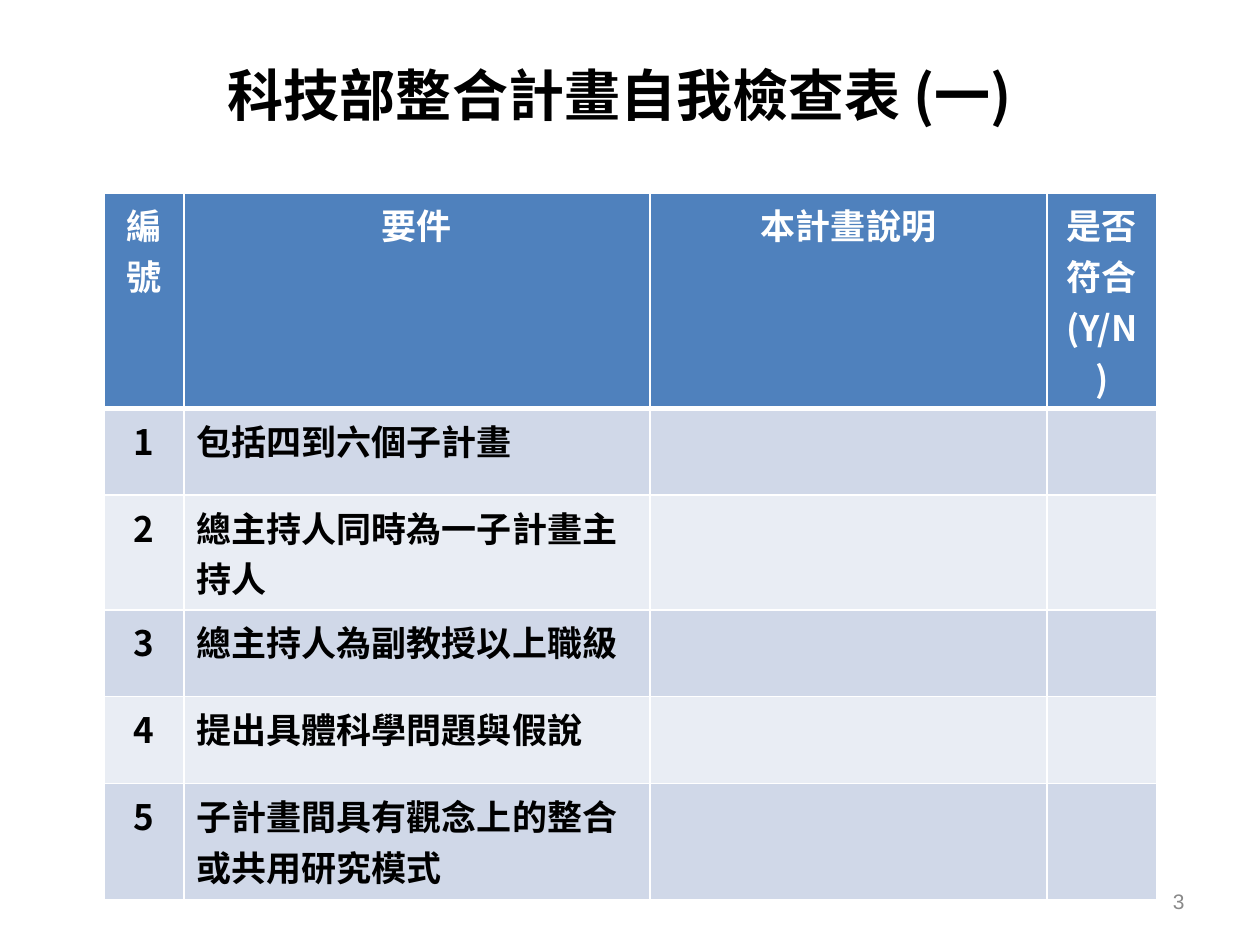
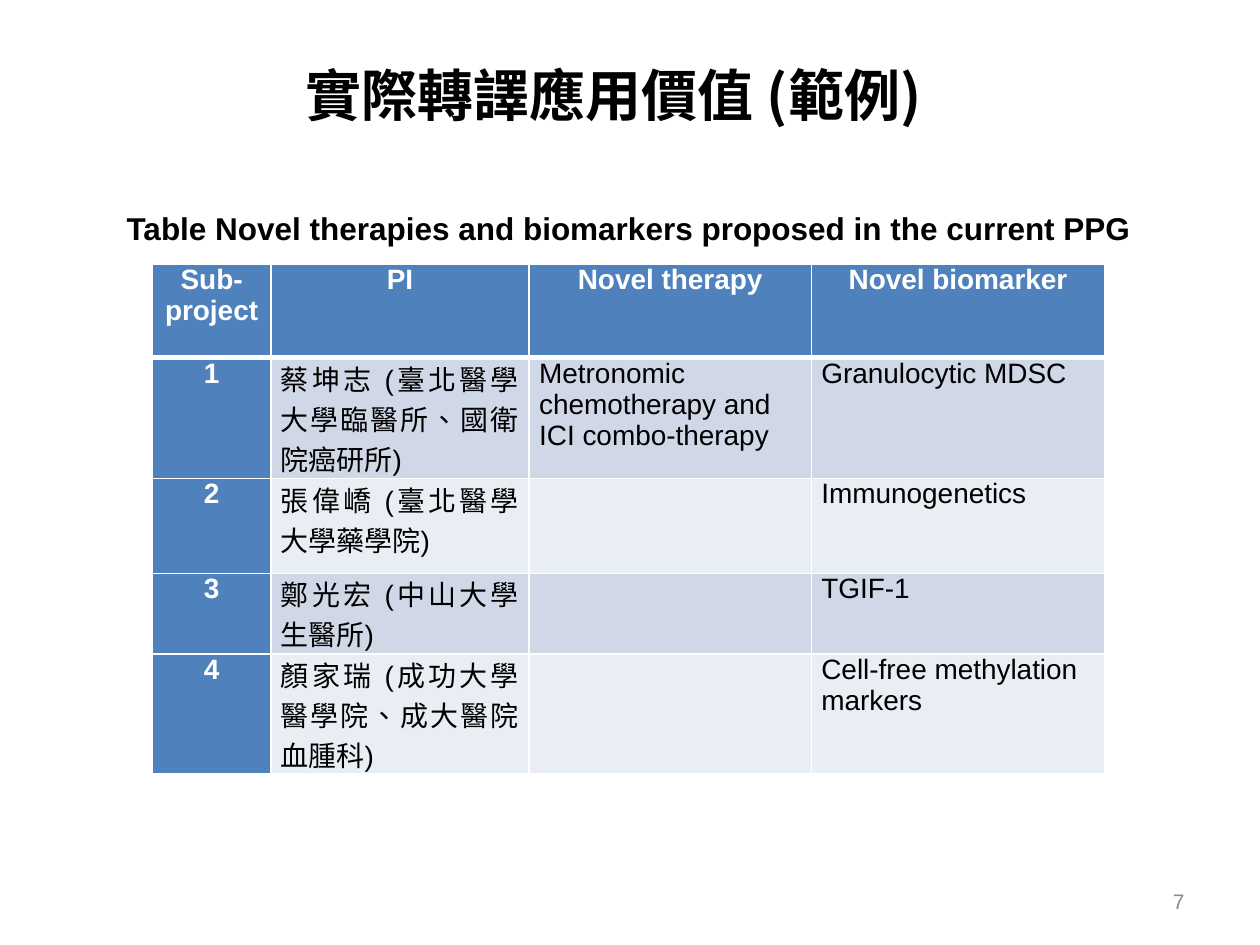
"""Build two proposal self-check slides, each with a title, a table and a page number."""
from dataclasses import dataclass

from lxml import etree
from pptx import Presentation
from pptx import util as u
from pptx.dml.color import RGBColor
from pptx.enum import text
from pptx.oxml import ns
from pptx.slide import Slide

COLORS = {
    "header": "4F81BD",
    "odd": "D0D8E8",
    "even": "E9EDF4",
    "light": "FFFFFF",
    "dark": "000000",
    "number": "898989",
}
LATIN, CJK = "Arial", "Noto Sans CJK SC"
LEFT, CENTER, RIGHT, JUSTIFY = (
    text.PP_ALIGN.LEFT, text.PP_ALIGN.CENTER, text.PP_ALIGN.RIGHT, text.PP_ALIGN.JUSTIFY,
)


@dataclass(frozen=True)
class TextStyle:
    """Look of a single-paragraph text."""
    size: int
    font: str = LATIN
    color: str = "dark"
    bold: bool = False
    align: text.PP_ALIGN = LEFT


@dataclass(frozen=True)
class Grid:
    """Content and measures, in inches, of one table."""
    left: float
    top: float
    widths: list[float]
    heights: list[float]
    rows: list[list[str]]
    aligns: list[text.PP_ALIGN]
    heading: TextStyle
    body: TextStyle
    margins: tuple[float, float] = (0.1, 0.05)
    heading_column: bool = False


TITLE = TextStyle(32, CJK, bold=True, align=CENTER)
CAPTION = TextStyle(18, bold=True, align=CENTER)
PAGE_NUMBER = TextStyle(12, color="number", align=RIGHT)

CHECKLIST = Grid(
    0.83, 1.53, [0.63, 3.7, 3.15, 0.87], [1.71, 0.69, 0.91, 0.69, 0.69, 0.92],
    [
        ["編號", "要件", "本計畫說明", "是否符合 (Y/N)"],
        ["1", "包括四到六個子計畫", "", ""],
        ["2", "總主持人同時為一子計畫主持人", "", ""],
        ["3", "總主持人為副教授以上職級", "", ""],
        ["4", "提出具體科學問題與假說", "", ""],
        ["5", "子計畫間具有觀念上的整合或共用研究模式", "", ""],
    ],
    [CENTER, LEFT, LEFT, LEFT],
    TextStyle(20, CJK, "light", True, CENTER),
    TextStyle(20, CJK, bold=True),
)
THERAPIES = Grid(
    1.21, 2.1, [0.94, 2.05, 2.24, 2.33], [0.74, 0.96, 0.75, 0.64, 0.95],
    [
        ["Sub-project", "PI", "Novel therapy", "Novel biomarker"],
        ["1", "蔡坤志 (臺北醫學大學臨醫所、國衛院癌研所)",
         "Metronomic chemotherapy and ICI combo-therapy", "Granulocytic MDSC"],
        ["2", "張偉嶠 (臺北醫學大學藥學院)", "", "Immunogenetics"],
        ["3", "鄭光宏 (中山大學生醫所)", "", "TGIF-1"],
        ["4", "顏家瑞 (成功大學醫學院、成大醫院血腫科)", "", "Cell-free methylation markers"],
    ],
    [CENTER, JUSTIFY, LEFT, LEFT],
    TextStyle(16, color="light", bold=True, align=CENTER),
    TextStyle(16),
    margins=(0.08, 0),
    heading_column=True,
)


def apply(target, values: dict) -> None:
    """Set each named attribute on the target."""
    for name, value in values.items():
        setattr(target, name, value)


def write(frame, words: str, style: TextStyle, align=None) -> None:
    """Put one styled run into the frame."""
    paragraph = frame.paragraphs[0]
    paragraph.alignment = style.align if align is None else align
    run = paragraph.add_run()
    run.text = words
    apply(run.font, {"name": style.font, "size": u.Pt(style.size), "bold": style.bold})
    run.font.color.rgb = RGBColor.from_string(COLORS[style.color])
    properties = run.font._element
    properties.set("lang", "zh-TW")
    etree.SubElement(properties, ns.qn("a:ea"), typeface=CJK)


def place(shape, left: float, top: float, width: float, height: float) -> None:
    """Move and size a shape, in inches."""
    measures = {"left": left, "top": top, "width": width, "height": height}
    apply(shape, {name: u.Inches(value) for name, value in measures.items()})


def add_caption(slide: Slide, words: str, style: TextStyle, box: tuple, wrap: bool = True) -> None:
    """Add a vertically centred text box."""
    frame = slide.shapes.add_textbox(*map(u.Inches, box)).text_frame
    apply(frame, {"word_wrap": wrap, "vertical_anchor": text.MSO_ANCHOR.MIDDLE})
    write(frame, words, style)


def set_borders(cell, top: int, bottom: int) -> None:
    """Draw white cell borders with the given widths in points."""
    for side, width in {"L": 1, "R": 1, "T": top, "B": bottom}.items():
        line = etree.SubElement(cell._tc.get_or_add_tcPr(), ns.qn(f"a:ln{side}"), w=str(u.Pt(width)))
        fill = etree.SubElement(line, ns.qn("a:solidFill"))
        etree.SubElement(fill, ns.qn("a:srgbClr"), val=COLORS["light"])


def add_grid(slide: Slide, grid: Grid) -> None:
    """Add a banded table with a heading row."""
    table = slide.shapes.add_table(
        len(grid.rows), len(grid.widths), u.Inches(grid.left), u.Inches(grid.top),
        u.Inches(sum(grid.widths)), u.Inches(sum(grid.heights)),
    ).table
    table.first_col = grid.heading_column
    for column, width in zip(table.columns, grid.widths):
        column.width = u.Inches(width)
    for row, height in zip(table.rows, grid.heights):
        row.height = u.Inches(height)
    side, edge = map(u.Inches, grid.margins)
    margins = {"margin_left": side, "margin_right": side, "margin_top": edge, "margin_bottom": edge}
    for r, entries in enumerate(grid.rows):
        for c, words in enumerate(entries):
            cell = table.cell(r, c)
            heading = r == 0 or (grid.heading_column and c == 0)
            band = "header" if heading else "odd" if r % 2 else "even"
            apply(cell, margins)
            set_borders(cell, top=3 if r == 1 else 1, bottom=3 if r == 0 else 1)
            cell.fill.solid()
            cell.fill.fore_color.rgb = RGBColor.from_string(COLORS[band])
            if words:
                style = grid.heading if heading else grid.body
                write(cell.text_frame, words, style, CENTER if heading else grid.aligns[c])


def add_page(deck, title: str, number: int, grid: Grid) -> Slide:
    """Add a slide with its title, page number and table."""
    slide = deck.slides.add_slide(deck.slide_layouts[5])
    add_caption(slide, str(number), PAGE_NUMBER, (7.17, 6.95, 2.33, 0.4))
    heading = slide.shapes.title
    place(heading, 0, 0.12, 9.84, 1.26)
    apply(heading.text_frame, {
        "vertical_anchor": text.MSO_ANCHOR.MIDDLE, "word_wrap": True,
        "auto_size": text.MSO_AUTO_SIZE.NONE,
    })
    write(heading.text_frame, title, TITLE)
    add_grid(slide, grid)
    return slide


def main() -> None:
    """Build and save the deck."""
    deck = Presentation()
    apply(deck, {"slide_width": u.Inches(10), "slide_height": u.Inches(7.5)})
    add_page(deck, "科技部整合計畫自我檢查表 (一)", 3, CHECKLIST)
    translation = add_page(deck, "實際轉譯應用價值 (範例) ", 7, THERAPIES)
    add_caption(
        translation, "Table Novel therapies and biomarkers proposed in the current PPG",
        CAPTION, (0.83, 1.61, 8.32, 0.4), wrap=False,
    )
    deck.save("out.pptx")


if __name__ == "__main__":
    main()
